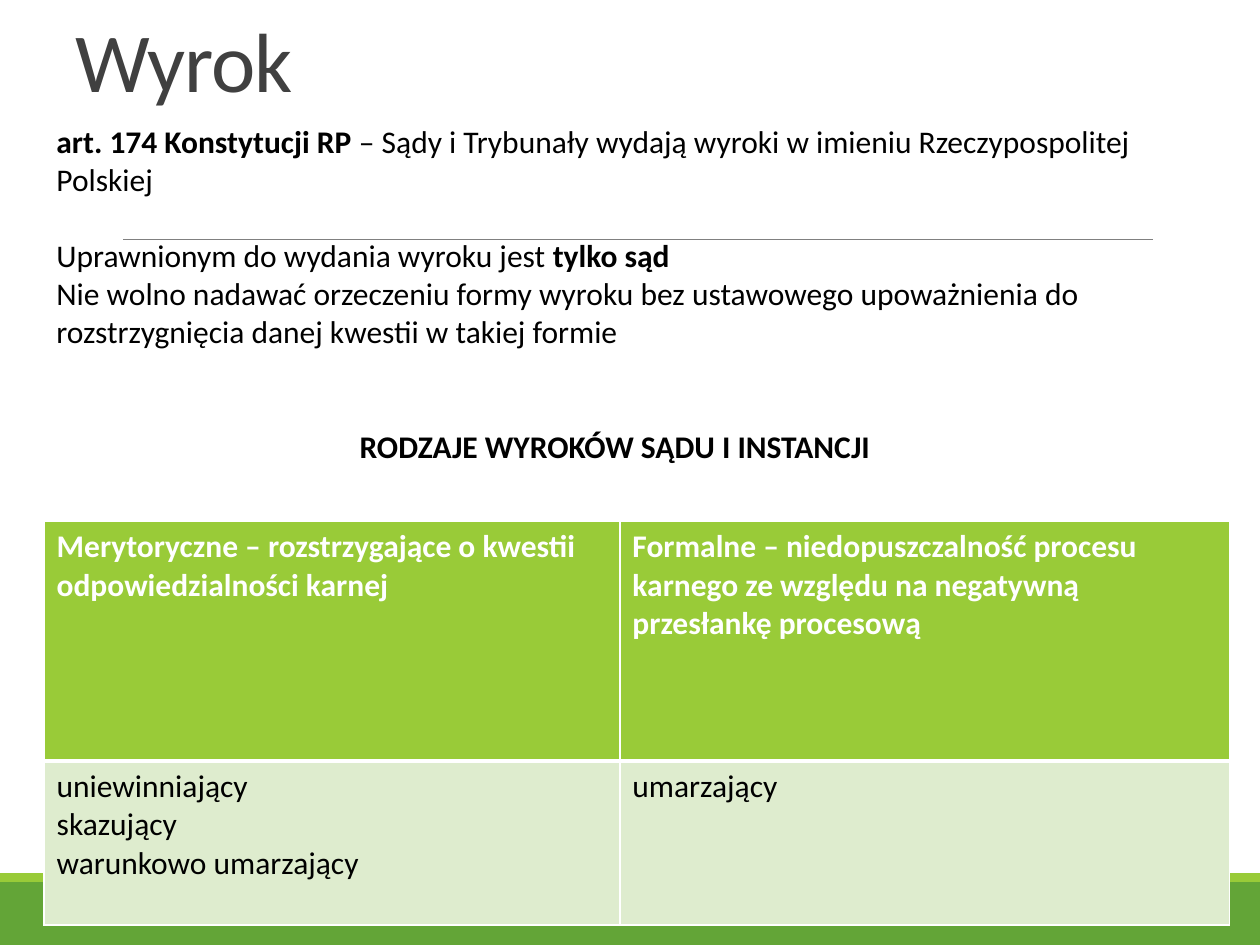
from pptx import Presentation
from pptx.dml.color import RGBColor
from pptx.enum.shapes import MSO_CONNECTOR, MSO_SHAPE
from pptx.enum.text import MSO_ANCHOR, MSO_AUTO_SIZE, PP_ALIGN
from pptx.oxml.ns import qn
from pptx.util import Inches, Pt
from lxml.etree import SubElement

COLS, ROWS = 100, 75
LINE_GAP = 22


def rgb(value):
    """Turn a hex string into a colour."""
    return RGBColor.from_string(value)


class Deck:
    """Style and current slide, with lengths in grid columns and rows."""

    font = "Calibri"
    size = 18
    black, white, title_grey, rule_grey = "000000", "FFFFFF", "404040", "808080"
    green, lime, pale = "63A537", "99CB38", "DEECCE"

    def __init__(self):
        """Start a 4:3 presentation with one title-only slide."""
        self.prs = Presentation()
        self.prs.slide_width, self.prs.slide_height = Inches(10), Inches(7.5)
        self.slide = self.prs.slides.add_slide(self.prs.slide_layouts[5])
        self.shapes = self.slide.shapes

    def x(self, cols):
        """Convert columns to a length."""
        return round(self.prs.slide_width * cols / COLS)

    def y(self, rows):
        """Convert rows to a length."""
        return round(self.prs.slide_height * rows / ROWS)

    def box(self, left, top, width, height):
        """Convert a grid rectangle to lengths."""
        return self.x(left), self.y(top), self.x(width), self.y(height)

    def run(self, p, text, color, bold=False, size=None):
        """Add one styled run."""
        r = p.add_run()
        r.text = text
        r.font.name, r.font.size, r.font.bold = self.font, Pt(size or self.size), bold
        r.font.color.rgb = rgb(color)
        return r

    def title(self, text, *area):
        """Place and format the title placeholder."""
        sp = self.shapes.title
        sp.left, sp.top, sp.width, sp.height = self.box(*area)
        tf = sp.text_frame
        tf.auto_size, tf.vertical_anchor = MSO_AUTO_SIZE.NONE, MSO_ANCHOR.BOTTOM
        p = tf.paragraphs[0]
        p.alignment, p.line_spacing = PP_ALIGN.LEFT, 0.85
        r = self.run(p, text, self.title_grey, size=48)
        r.font._element.set("spc", "-50")

    def bar(self, color, *area):
        """Draw a plain filled band."""
        sp = self.shapes.add_shape(MSO_SHAPE.RECTANGLE, *self.box(*area))
        sp.shadow.inherit = False
        sp.fill.solid()
        sp.fill.fore_color.rgb = rgb(color)
        sp.line.fill.background()

    def rule(self, left, right, top):
        """Draw a thin horizontal line."""
        line = self.shapes.add_connector(
            MSO_CONNECTOR.STRAIGHT, self.x(left), self.y(top), self.x(right), self.y(top))
        line.line.color.rgb, line.line.width = rgb(self.rule_grey), Pt(0.5)
        SubElement(line._element.spPr, qn("a:effectLst"))

    def text(self, paragraphs, *area):
        """Add paragraphs given as (lines before, alignment, runs)."""
        tf = self.shapes.add_textbox(*self.box(*area)).text_frame
        tf.word_wrap = True
        for i, (gap, align, runs) in enumerate(paragraphs):
            p = tf.add_paragraph() if i else tf.paragraphs[0]
            p.alignment, p.space_before = align, Pt(gap * LINE_GAP)
            for text, bold in runs:
                self.run(p, text, self.black, bold)

    def border(self, cell, side, width):
        """Add a white border to one side of a cell."""
        ln = SubElement(cell._tc.get_or_add_tcPr(), qn(f"a:ln{side}"), w=str(Pt(width)))
        fill = SubElement(ln, qn("a:solidFill"))
        SubElement(fill, qn("a:srgbClr"), val=self.white)

    def table(self, rows, widths, heights, left, top):
        """Add a table with a header row; each cell is a list of lines."""
        area = self.box(left, top, sum(widths), sum(heights))
        table = self.shapes.add_table(len(rows), len(widths), *area).table
        table.horz_banding = False
        for col, width in zip(table.columns, widths):
            col.width = self.x(width)
        for i, (row, height) in enumerate(zip(rows, heights)):
            table.rows[i].height = self.y(height)
            head = i == 0
            for j, lines in enumerate(row):
                cell = table.cell(i, j)
                for side in "LRTB":
                    self.border(cell, side, 3 if side == ("B" if head else "T") else 1)
                cell.fill.solid()
                cell.fill.fore_color.rgb = rgb(self.lime if head else self.pale)
                tf = cell.text_frame
                for k, line in enumerate(lines):
                    p = tf.add_paragraph() if k else tf.paragraphs[0]
                    self.run(p, line, self.white if head else self.black, head)


def main():
    """Build the slide about judgments."""
    deck = Deck()
    deck.bar(deck.green, 0, 70, 100, 5)
    deck.bar(deck.lime, 0, 69.3, 100, 0.7)
    deck.rule(9.8, 91.5, 19)
    deck.title("Wyrok", 5, 0, 90, 9.2)
    left = PP_ALIGN.LEFT
    deck.text([
        (0, left, [("art. 174 Konstytucji RP ", True),
                   ("– Sądy i Trybunały wydają wyroki w imieniu Rzeczypospolitej Polskiej", False)]),
        (1, left, [("Uprawnionym do wydania wyroku jest ", False), ("tylko sąd", True)]),
        (0, left, [("Nie wolno nadawać orzeczeniu formy wyroku bez ustawowego upoważnienia "
                    "do rozstrzygnięcia danej kwestii w takiej formie", False)]),
        (2, PP_ALIGN.CENTER, [("RODZAJE WYROKÓW SĄDU I INSTANCJI", True)]),
    ], 3.5, 9.2, 90.6, 28.3)
    deck.table([
        [["Merytoryczne – rozstrzygające o kwestii odpowiedzialności karnej"],
         ["Formalne – niedopuszczalność procesu karnego ze względu na negatywną "
          "przesłankę procesową"]],
        [["uniewinniający", "skazujący", "warunkowo umarzający"], ["umarzający"]],
    ], [45.7, 48.4], [19, 13], 3.5, 41.4)
    deck.prs.save("out.pptx")


if __name__ == "__main__":
    main()
